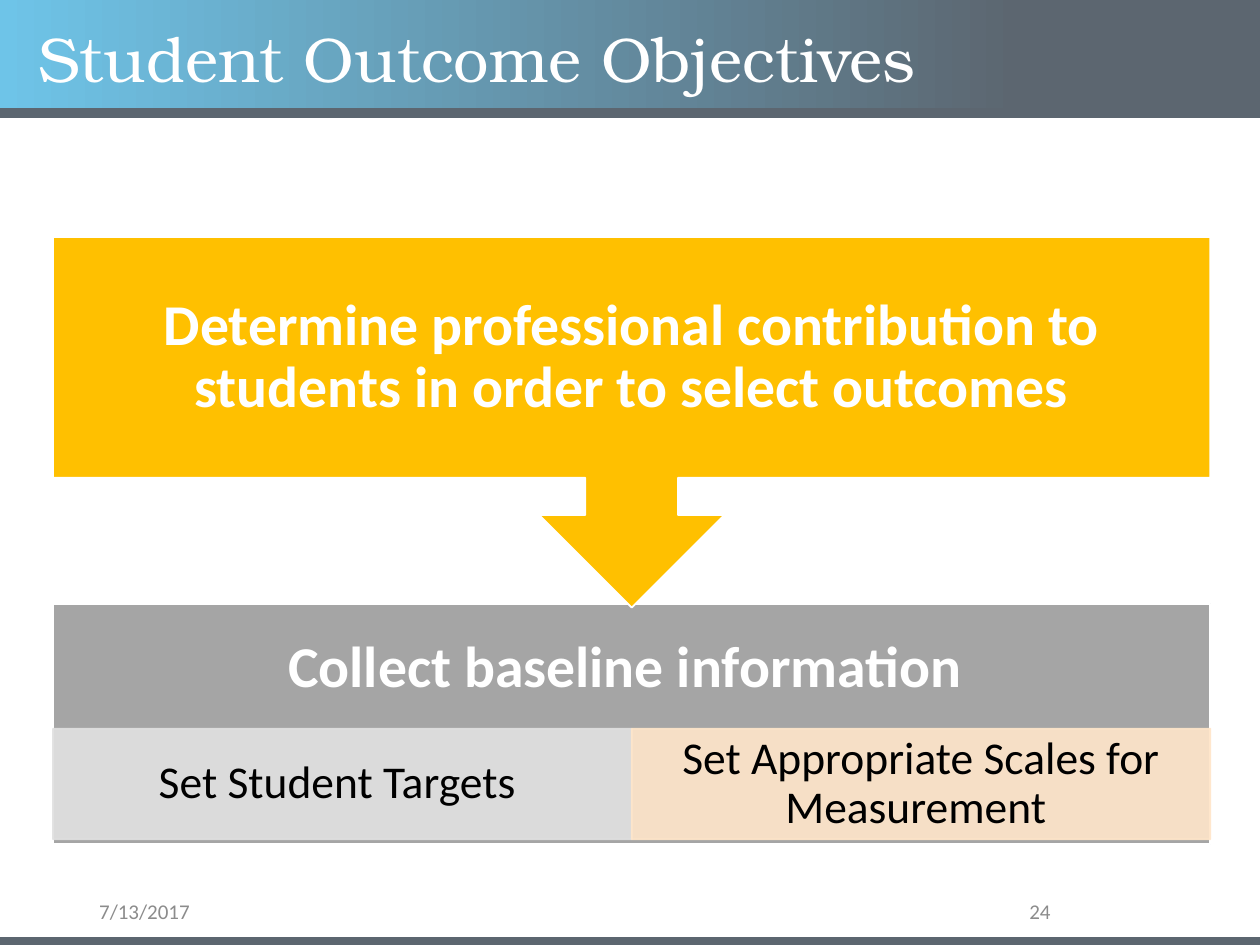
from lxml import etree
from pptx import Presentation
from pptx.dml.color import RGBColor
from pptx.enum import shapes, text
from pptx.oxml import ns
from pptx.util import Cm, Pt

COLORS = {
    "sky": "6EC4E8", "slate": "5C6670", "white": "FFFFFF", "black": "000000",
    "amber": "FFC000", "gray": "A5A5A5", "light_gray": "E1E1E1",
    "peach": "FFE6CA", "footer": "8C8C8C",
}
SLIDE_W, SLIDE_H = 25.4, 19.05
BAR_H = 0.2
LEFT, CENTER, RIGHT = text.PP_ALIGN.LEFT, text.PP_ALIGN.CENTER, text.PP_ALIGN.RIGHT


def color(name):
    return RGBColor.from_string(COLORS[name])


def set_alpha(fill_element, percent):
    """Make every RGB colour below the element partly transparent."""
    for rgb in fill_element.iter(ns.qn("a:srgbClr")):
        etree.SubElement(rgb, ns.qn("a:alpha")).set("val", str(percent * 1000))


def add_block(slide, kind, box, fill, line=None):
    block = slide.shapes.add_shape(kind, *map(Cm, box))
    block.shadow.inherit = False
    block.fill.solid()
    block.fill.fore_color.rgb = color(fill)
    if line:
        block.line.color.rgb = color(line)
        block.line.width = Pt(1)
    else:
        block.line.fill.background()
    return block


def write(shape, words, size, ink, font="Calibri", align=CENTER, bold=False,
          spacing=0.9, insets=(0.25, 0.13, 0.25, 0.13)):
    """Fill a shape with one paragraph; insets are left, top, right, bottom in cm."""
    frame = shape.text_frame
    frame.text = words
    frame.word_wrap = True
    frame.auto_size = text.MSO_AUTO_SIZE.NONE
    frame.vertical_anchor = text.MSO_ANCHOR.MIDDLE
    frame.margin_left, frame.margin_top, frame.margin_right, frame.margin_bottom = map(Cm, insets)
    paragraph = frame.paragraphs[0]
    paragraph.alignment = align
    paragraph.line_spacing = spacing
    run = paragraph.runs[0]
    run.font.name, run.font.size, run.font.bold = font, Pt(size), bold
    run.font.color.rgb = color(ink)


def add_header(slide, left, top, width, height):
    rect = shapes.MSO_SHAPE.RECTANGLE
    banner = add_block(slide, rect, (left, top, width, height), "sky")
    banner.fill.gradient()
    banner.fill.gradient_angle = 0
    for stop, name, position in zip(banner.fill.gradient_stops, ("sky", "slate"), (0, 0.81)):
        stop.color.rgb = color(name)
        stop.position = position
    add_block(slide, rect, (left, top + height - 0.02, width, BAR_H), "slate")

    title = slide.shapes.title
    title.left, title.top = Cm(left + 0.53), Cm(top + 0.53)
    title.width, title.height = Cm(21.9), Cm(1.45)
    write(title, "Student Outcome Objectives", 36, "white", "TeX Gyre Bonum", LEFT)
    slide.shapes._spTree.append(title._element)  # in front of the banner


def add_process(slide, left, top, width, height):
    step_h, baseline_h = 7.47, 4.85
    insets = (0.66,) * 4
    baseline_top = top + height - baseline_h
    baseline = add_block(slide, shapes.MSO_SHAPE.RECTANGLE,
                         (left, baseline_top, width, baseline_h), "gray", "white")
    write(baseline, "Collect baseline information ", 33, "white", bold=True,
          insets=(0.66, 0.66, 0.66, 2.9))

    tasks = [("Set Student Targets ", "light_gray"),
             ("Set Appropriate Scales for Measurement ", "peach")]
    task_w = width / len(tasks)
    for index, (words, fill) in enumerate(tasks):
        task = add_block(slide, shapes.MSO_SHAPE.RECTANGLE,
                         (left + index * task_w, baseline_top + 2.52, task_w, 2.23),
                         fill, fill)
        set_alpha(task._element.spPr, 90)
        write(task, words, 26, "black", insets=(0.5, 0.09, 0.5, 0.09))

    contribution = add_block(slide, shapes.MSO_SHAPE.DOWN_ARROW_CALLOUT,
                             (left, top, width, step_h), "amber", "white")
    write(contribution,
          "Determine professional contribution to students in order to select outcomes",
          33, "white", bold=True, insets=insets)


def add_footer(slide, left, top, width, height):
    add_block(slide, shapes.MSO_SHAPE.RECTANGLE,
              (left, top + height - 0.16, width, BAR_H - 0.04), "slate")
    for words, offset, box_w, align in [("7/13/2017", 1.75, 5.72, LEFT),
                                        ("24", 17.93, 3.5, RIGHT)]:
        label = slide.shapes.add_textbox(Cm(left + offset), Cm(top), Cm(box_w), Cm(0.58))
        write(label, words, 12, "footer", align=align, spacing=1.0)


def main():
    deck = Presentation()
    deck.slide_width, deck.slide_height = Cm(SLIDE_W), Cm(SLIDE_H)
    slide = deck.slides.add_slide(deck.slide_layouts[5])
    add_header(slide, 0, 0, SLIDE_W, 2.2)
    add_process(slide, 1.07, 4.78, 23.33, 12.24)
    add_footer(slide, 0, 18.08, SLIDE_W, SLIDE_H - 18.08)
    deck.save("out.pptx")


if __name__ == "__main__":
    main()
